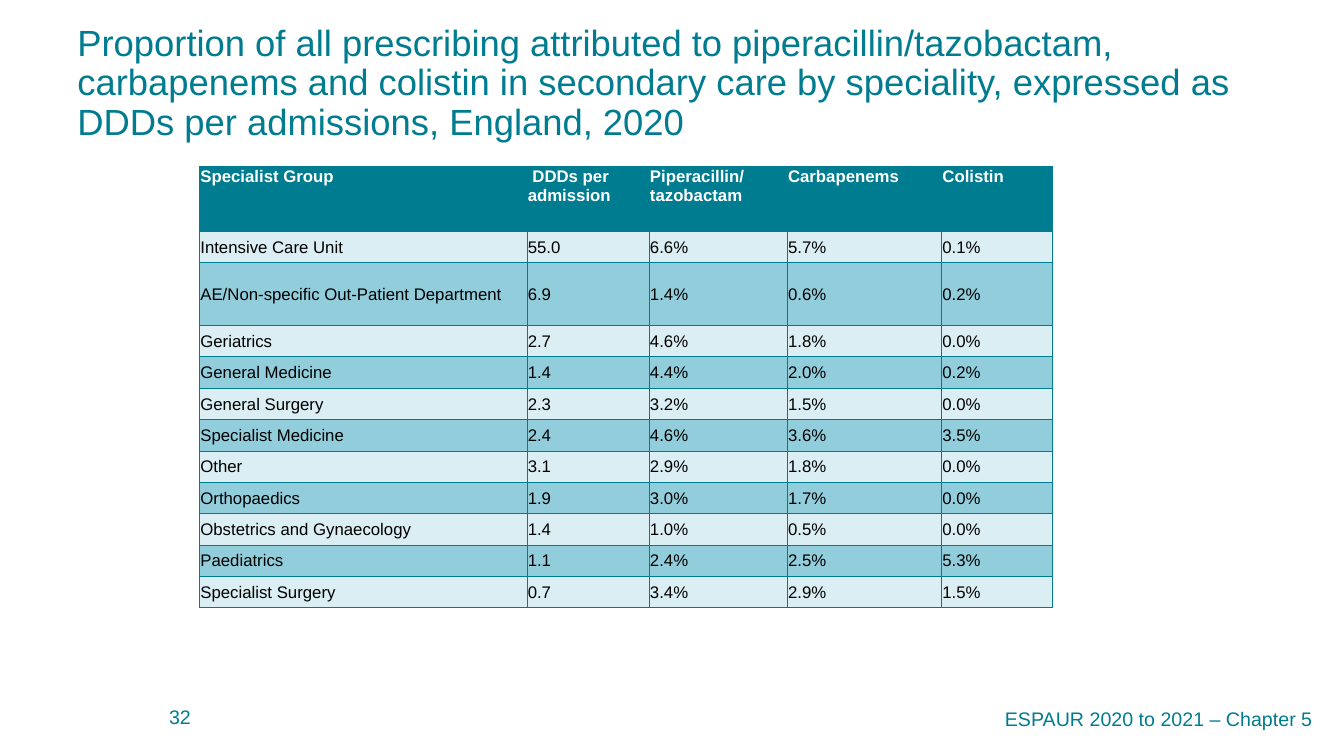
"""Build the slide on prescribing by speciality in secondary care, England, 2020."""
from dataclasses import dataclass

import pptx
import pptx.dml.color
import pptx.enum.text
import pptx.oxml
import pptx.oxml.ns
import pptx.util
from pptx.util import Cm


@dataclass(frozen=True)
class Theme:
    font: str = "Arial"
    teal: str = "007C91"
    pale: str = "DAEEF3"
    mid: str = "92CDDC"
    white: str = "FFFFFF"
    black: str = "000000"
    title_size: int = 26
    footer_size: int = 14
    table_size: int = 12
    border: float = 0.5


theme = Theme()
ANCHOR = pptx.enum.text.MSO_ANCHOR
ALIGN = pptx.enum.text.PP_ALIGN


def add_run(p, text, size, color, bold=False):
    r = p.add_run()
    r.text = text
    r.font.name = theme.font
    r.font.size = pptx.util.Pt(size)
    r.font.bold = bold
    r.font.color.rgb = pptx.dml.color.RGBColor.from_string(color)


def add_text(s, box, text, size, anchor):
    tf = s.shapes.add_textbox(*[Cm(v) for v in box]).text_frame
    tf.word_wrap = True
    tf.vertical_anchor = anchor
    p = tf.paragraphs[0]
    add_run(p, text, size, theme.teal)
    return p


prs = pptx.Presentation()
prs.slide_width, prs.slide_height = Cm(33.87), Cm(19.05)
s = prs.slides.add_slide(prs.slide_layouts[6])

rows = [
    ("Specialist Group", " DDDs per admission", "Piperacillin/ tazobactam", "Carbapenems", "Colistin"),
    ("Intensive Care Unit", "55.0", "6.6%", "5.7%", "0.1%"),
    ("AE/Non-specific Out-Patient Department", "6.9", "1.4%", "0.6%", "0.2%"),
    ("Geriatrics", "2.7", "4.6%", "1.8%", "0.0%"),
    ("General Medicine", "1.4", "4.4%", "2.0%", "0.2%"),
    ("General Surgery", "2.3", "3.2%", "1.5%", "0.0%"),
    ("Specialist Medicine", "2.4", "4.6%", "3.6%", "3.5%"),
    ("Other", "3.1", "2.9%", "1.8%", "0.0%"),
    ("Orthopaedics", "1.9", "3.0%", "1.7%", "0.0%"),
    ("Obstetrics and Gynaecology", "1.4", "1.0%", "0.5%", "0.0%"),
    ("Paediatrics", "1.1", "2.4%", "2.5%", "5.3%"),
    ("Specialist Surgery", "0.7", "3.4%", "2.9%", "1.5%"),
]
col_widths = [8.25, 3.08, 3.48, 3.89, 2.79]
row_height = 0.79
row_heights = [1.64, row_height, 2 * row_height] + [row_height] * (len(rows) - 3)

table = s.shapes.add_table(
    len(rows), len(col_widths), Cm(5.03), Cm(4.19), Cm(sum(col_widths)), Cm(sum(row_heights))
).table
table.horz_banding = False
for col, width in zip(table.columns, col_widths):
    col.width = Cm(width)
for row, height in zip(table.rows, row_heights):
    row.height = Cm(height)

for i, values in enumerate(rows):
    header = i == 0
    fill = theme.teal if header else (theme.pale if i % 2 else theme.mid)
    for j, value in enumerate(values):
        cell = table.cell(i, j)
        cell.margin_left = cell.margin_right = cell.margin_top = Cm(0.02)
        cell.margin_bottom = 0
        cell.vertical_anchor = ANCHOR.TOP if header else ANCHOR.MIDDLE
        tc_pr = cell._tc.get_or_add_tcPr()
        for side in ("lnL", "lnR", "lnT", "lnB"):
            tc_pr.append(pptx.oxml.parse_xml(
                f'<a:{side} {pptx.oxml.ns.nsdecls("a")} w="{pptx.util.Pt(theme.border)}">'
                f'<a:solidFill><a:srgbClr val="{theme.teal}"/></a:solidFill></a:{side}>'
            ))
        cell.fill.solid()
        cell.fill.fore_color.rgb = pptx.dml.color.RGBColor.from_string(fill)
        add_run(cell.text_frame.paragraphs[0], value, theme.table_size,
                theme.white if header else theme.black, header)

p = add_text(s, (0.36, 17.32, 32.97, 1.57), "ESPAUR 2020 to 2021 – Chapter 5",
             theme.footer_size, ANCHOR.MIDDLE)
p.alignment = ALIGN.RIGHT

p = add_text(s, (2.26, 17.55, 27.79, 1.02), "32", theme.footer_size, ANCHOR.MIDDLE)
p._p.get_or_add_pPr().set("marL", str(Cm(1.75)))

p = add_text(s, (1.7, 0.51, 30.91, 2.69),
             "Proportion of all prescribing attributed to piperacillin/tazobactam, "
             "carbapenems and colistin in secondary care by speciality, "
             "expressed as DDDs per admissions, England, 2020",
             theme.title_size, ANCHOR.TOP)
p.line_spacing = 0.9

prs.save("out.pptx")
